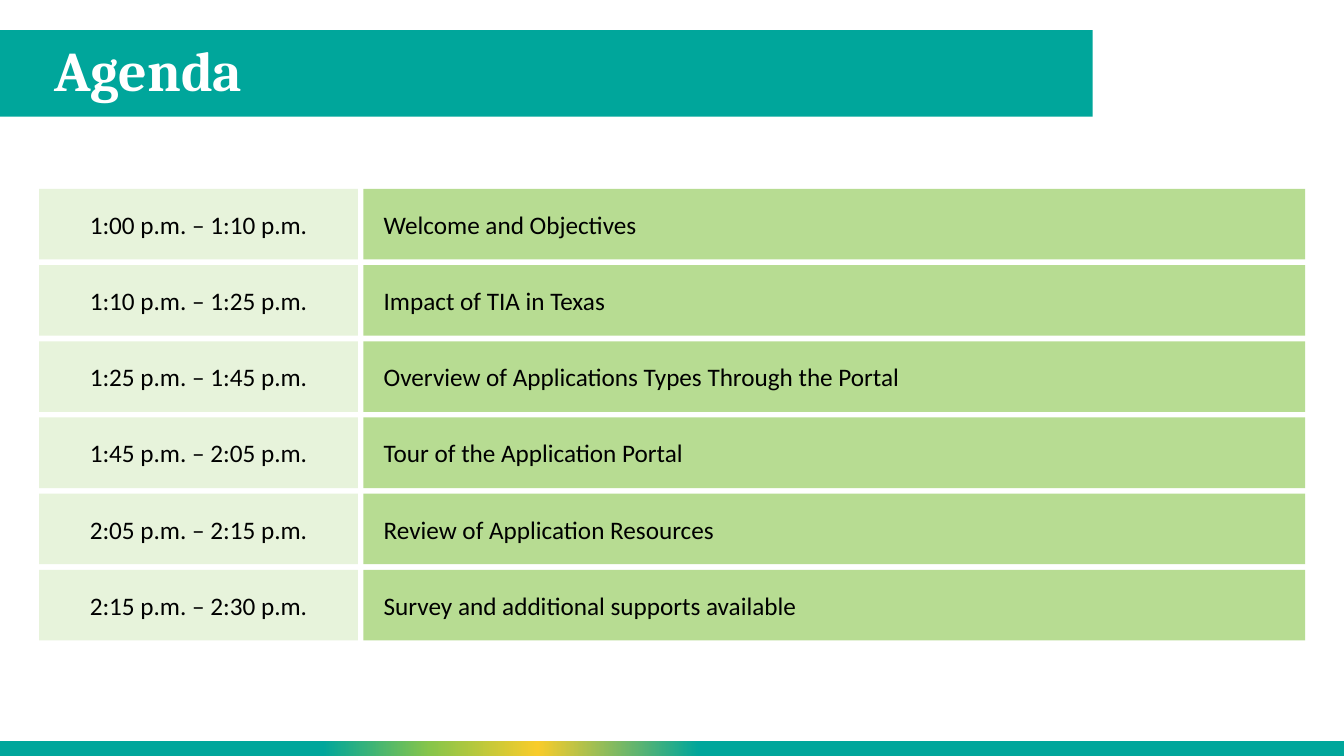
from lxml import etree
from pptx import Presentation
from pptx.dml.color import RGBColor
from pptx.enum.shapes import MSO_SHAPE
from pptx.enum.text import MSO_ANCHOR, PP_ALIGN
from pptx.oxml.ns import qn
from pptx.util import Cm, Pt

RECTANGLE = MSO_SHAPE.RECTANGLE
MIDDLE = MSO_ANCHOR.MIDDLE
LEFT, CENTER = PP_ALIGN.LEFT, PP_ALIGN.CENTER

# Content
TITLE = "Agenda"
AGENDA = [
    ("1:00 p.m. – 1:10 p.m.", "Welcome and Objectives"),
    ("1:10 p.m. – 1:25 p.m.", "Impact of TIA in Texas"),
    ("1:25 p.m. – 1:45 p.m.", "Overview of Applications Types Through the Portal"),
    ("1:45 p.m. – 2:05 p.m.", "Tour of the Application Portal"),
    ("2:05 p.m. – 2:15 p.m.", "Review of Application Resources"),
    ("2:15 p.m. – 2:30 p.m.", "Survey and additional supports available"),
]

# Colours
TEAL = RGBColor(0x00, 0xA6, 0x9B)
YELLOW = RGBColor(0xF8, 0xCC, 0x2B)
GREEN = RGBColor(0x87, 0xC5, 0x4A)
PALE_GREEN = RGBColor(0xE7, 0xF3, 0xDB)
LIGHT_GREEN = RGBColor(0xB7, 0xDC, 0x92)
WHITE = RGBColor(0xFF, 0xFF, 0xFF)
BLACK = RGBColor(0x00, 0x00, 0x00)
FOOTER_STOPS = [(0, TEAL), (48, TEAL), (60, YELLOW), (68, GREEN), (76, TEAL), (100, TEAL)]

# Layout
SLIDE_WIDTH, SLIDE_HEIGHT = Cm(33.87), Cm(19.05)
BANNER_TOP, BANNER_WIDTH, BANNER_HEIGHT = Cm(0.76), Cm(27.54), Cm(2.18)
TITLE_LEFT = Cm(1.12)
FOOTER_HEIGHT = Cm(0.38)
ROWS_TOP, ROW_HEIGHT, ROW_PITCH = Cm(4.76), Cm(1.78), Cm(1.92)
TIME_LEFT, TIME_WIDTH = Cm(0.99), Cm(8.03)
TOPIC_LEFT, TOPIC_WIDTH = Cm(9.16), Cm(23.73)
TIME_INSET, TOPIC_INSET = Cm(0.25), Cm(0.51)


def add_block(slide, left, top, width, height, color):
    block = slide.shapes.add_shape(RECTANGLE, left, top, width, height)
    block.shadow.inherit = False
    block.fill.solid()
    block.fill.fore_color.rgb = color
    block.line.fill.background()
    return block


def set_gradient(shape, stops, angle):
    shape.fill.gradient()
    shape.fill.gradient_angle = angle
    stop_list = shape._element.spPr.find(qn("a:gradFill")).find(qn("a:gsLst"))
    for old_stop in list(stop_list):
        stop_list.remove(old_stop)
    for percent, color in stops:
        stop = etree.SubElement(stop_list, qn("a:gs"), pos=str(percent * 1000))
        etree.SubElement(stop, qn("a:srgbClr"), val=str(color))


def write(shape, text, font_name, size, color, align=LEFT, inset=TIME_INSET, bold=False):
    frame = shape.text_frame
    frame.text = text
    frame.word_wrap = True
    frame.vertical_anchor = MIDDLE
    frame.margin_left = frame.margin_right = inset
    paragraph = frame.paragraphs[0]
    paragraph.alignment = align
    font = paragraph.runs[0].font
    font.name, font.size, font.bold = font_name, Pt(size), bold
    font.color.rgb = color


def main():
    deck = Presentation()
    deck.slide_width, deck.slide_height = SLIDE_WIDTH, SLIDE_HEIGHT
    slide = deck.slides.add_slide(deck.slide_layouts[6])

    # Banner and footer strip
    add_block(slide, 0, BANNER_TOP, BANNER_WIDTH, BANNER_HEIGHT, TEAL)
    footer = add_block(slide, 0, SLIDE_HEIGHT - FOOTER_HEIGHT, SLIDE_WIDTH, FOOTER_HEIGHT, TEAL)
    set_gradient(footer, FOOTER_STOPS, 180)

    # Title
    title = slide.shapes.add_textbox(
        TITLE_LEFT, BANNER_TOP, BANNER_WIDTH - TITLE_LEFT, BANNER_HEIGHT)
    write(title, TITLE, "Cambria", 40, WHITE, bold=True)
    title.text_frame.paragraphs[0].line_spacing = 0.9

    # Agenda rows
    for row, (time, topic) in enumerate(AGENDA):
        top = ROWS_TOP + row * ROW_PITCH
        time_block = add_block(slide, TIME_LEFT, top, TIME_WIDTH, ROW_HEIGHT, PALE_GREEN)
        write(time_block, time, "Calibri", 18, BLACK, align=CENTER)
        topic_block = add_block(slide, TOPIC_LEFT, top, TOPIC_WIDTH, ROW_HEIGHT, LIGHT_GREEN)
        write(topic_block, topic, "Calibri", 18, BLACK, inset=TOPIC_INSET)

    deck.save("out.pptx")


if __name__ == "__main__":
    main()
